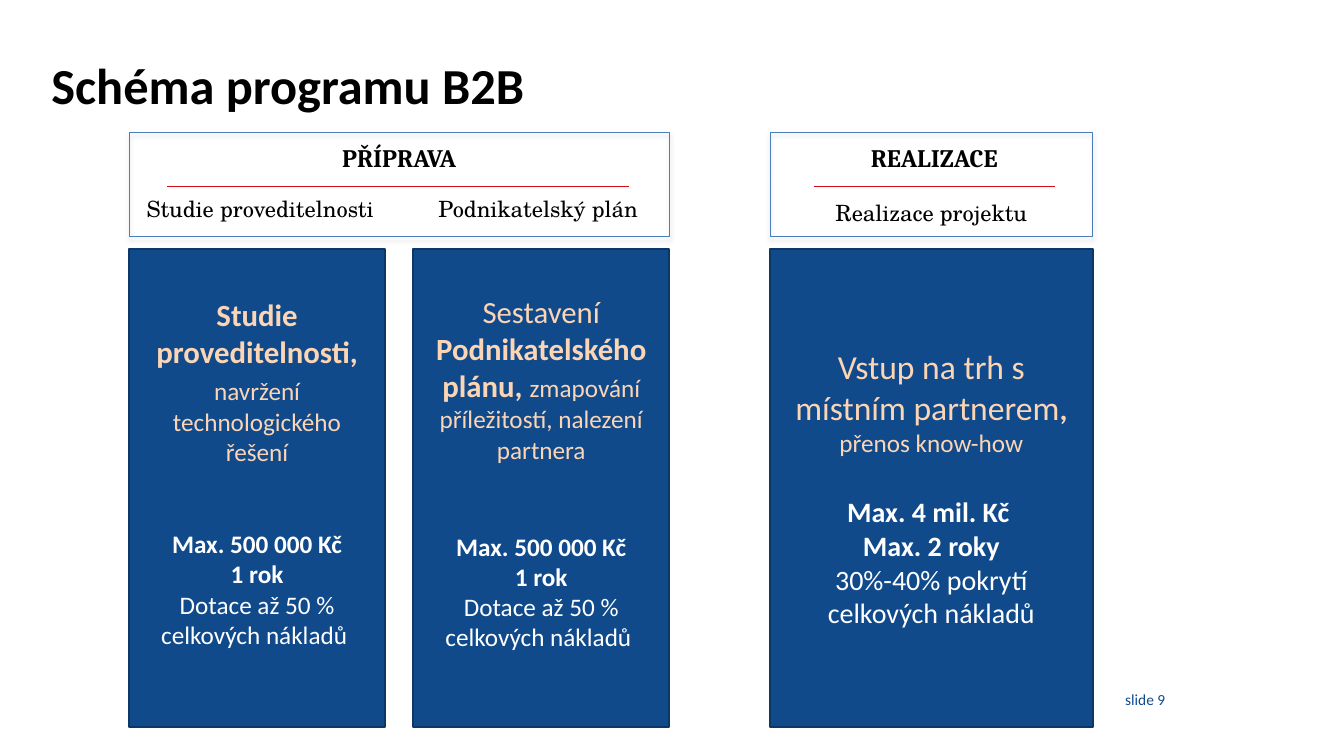
from pptx import Presentation
from pptx.util import Pt
from pptx.dml.color import RGBColor as Rgb
from pptx.enum.shapes import MSO_SHAPE as Shape, MSO_CONNECTOR as Link
from pptx.enum.text import PP_ALIGN as Align, MSO_ANCHOR as Anchor
from lxml.etree import SubElement as Sub
from pptx.oxml.ns import qn

HUES = {
    "black": "000000", "white": "FFFFFF", "navy": "104A8B", "edge": "0C3767",
    "peach": "FCD5B5", "blue": "4A7EBB", "red": "D50917", "gray": "808080",
}


def hue(name):
    return Rgb.from_string(HUES[name])


def write(frame, paras, align=Align.CENTER, anchor=Anchor.MIDDLE, face="Calibri"):
    frame.word_wrap = True
    frame.vertical_anchor = anchor
    for i, (gap, runs) in enumerate(paras):
        para = frame.paragraphs[0] if i == 0 else frame.add_paragraph()
        para.alignment = align
        if gap:
            para.space_before = Pt(gap)
        for text, size, bold, color in runs:
            run = para.add_run()
            run.text = text
            run.font.name = face
            run.font.size = Pt(size)
            run.font.bold = bold
            run.font.color.rgb = hue(color)


deck = Presentation()
deck.slide_width, deck.slide_height = Pt(960), Pt(540)
slide = deck.slides.add_slide(deck.slide_layouts[5])
shapes = slide.shapes

title = shapes.title
title.left, title.top, title.width, title.height = Pt(36.7), Pt(35.3), Pt(802.8), Pt(55.4)
frame = title.text_frame
frame.margin_left = frame.margin_right = frame.margin_top = frame.margin_bottom = 0
write(frame, [(0, [("Schéma programu B2B", 36, True, "black")])], Align.LEFT)
frame.paragraphs[0].line_spacing = 0.9

foot = shapes.add_textbox(Pt(623.5), Pt(485.3), Pt(216), Pt(28.8))
write(foot.text_frame, [(0, [("slide 9", 11, False, "navy")])], Align.RIGHT)

LEFT, MID, RIGHT = 92.2, 295.2, 550.1
SLIM, WIDE = 182.9, 230.4
SPAN = MID + SLIM - LEFT

terms = [
    (0, [("1 rok", 18, True, "white")]),
    (0, [("Dotace až 50\u00a0% celkových nákladů ", 18, False, "white")]),
]
limit = [("Max. 500 000 Kč", 18, True, "white")]
cards = [
    (LEFT, SLIM, 22, [
        (0, [("Studie proveditelnosti,", 22, True, "peach")]),
        (0, [("navržení", 18, False, "peach"), (" ", 22, True, "peach"),
             ("technologického řešení", 18, False, "peach")]),
        (44, limit), *terms]),
    (MID, SLIM, 22, [
        (0, [("Sestavení ", 22, False, "peach"),
             ("Podnikatelského plánu, ", 22, True, "peach"),
             ("zmapování příležitostí, nalezení partnera", 18, False, "peach")]),
        (47.7, limit), *terms]),
    (RIGHT, WIDE, 0, [
        (0, [("Vstup na trh s místním partnerem", 24, False, "peach"),
             (", ", 22, True, "peach"), ("přenos know-how", 18, False, "peach")]),
        (27, [("Max. 4 mil. Kč ", 20, True, "white")]),
        (0, [("Max. 2 roky", 20, True, "white")]),
        (0, [("30%-40% pokrytí celkových nákladů", 20, False, "white")])]),
]
for x, width, pad, paras in cards:
    card = shapes.add_shape(Shape.RECTANGLE, Pt(x), Pt(177.8), Pt(width), Pt(341.3))
    card.shadow.inherit = False
    card.fill.solid()
    card.fill.fore_color.rgb = hue("navy")
    card.line.color.rgb = hue("edge")
    card.line.width = Pt(1.5)
    card.text_frame.margin_bottom = Pt(3.6 + pad)
    write(card.text_frame, paras)

for x, width in [(LEFT, SPAN), (RIGHT, WIDE)]:
    head = shapes.add_shape(Shape.RECTANGLE, Pt(x), Pt(95), Pt(width), Pt(74.2))
    head.fill.background()
    head.line.color.rgb = hue("blue")
    head.line.width = Pt(0.75)
    head.shadow.inherit = False
    glow = Sub(head.element.spPr.find(qn("a:effectLst")), qn("a:outerShdw"),
               blurRad=str(Pt(3.1)), dist=str(Pt(1.8)), dir="5400000", rotWithShape="0")
    tint = Sub(glow, qn("a:srgbClr"), val=HUES["gray"])
    Sub(tint, qn("a:alpha"), val="35000")

labels = [
    (LEFT, 136.1, SLIM, " Studie proveditelnosti", 16, False, "TeX Gyre Schola"),
    (MID, 136.1, SLIM, "Podnikatelský plán ", 16, False, "TeX Gyre Schola"),
    (RIGHT, 139, WIDE, "Realizace projektu", 16, False, "TeX Gyre Schola"),
    (LEFT, 97.9, SPAN, "PŘÍPRAVA", 18, True, "Cambria"),
    (RIGHT + 2.1, 97.9, WIDE, "REALIZACE", 18, True, "Cambria"),
]
for x, y, width, text, size, bold, face in labels:
    box = shapes.add_textbox(Pt(x), Pt(y), Pt(width), Pt(size + 10.8))
    write(box.text_frame, [(0, [(text, size, bold, "black")])], anchor=Anchor.TOP, face=face)

for start, end in [(581.8, 753.8), (119.5, 449.3)]:
    rule = shapes.add_connector(Link.STRAIGHT, Pt(start), Pt(133.2), Pt(end), Pt(133.2))
    rule.line.color.rgb = hue("red")
    rule.line.width = Pt(1)
    Sub(rule.element.spPr, qn("a:effectLst"))

deck.save("out.pptx")
